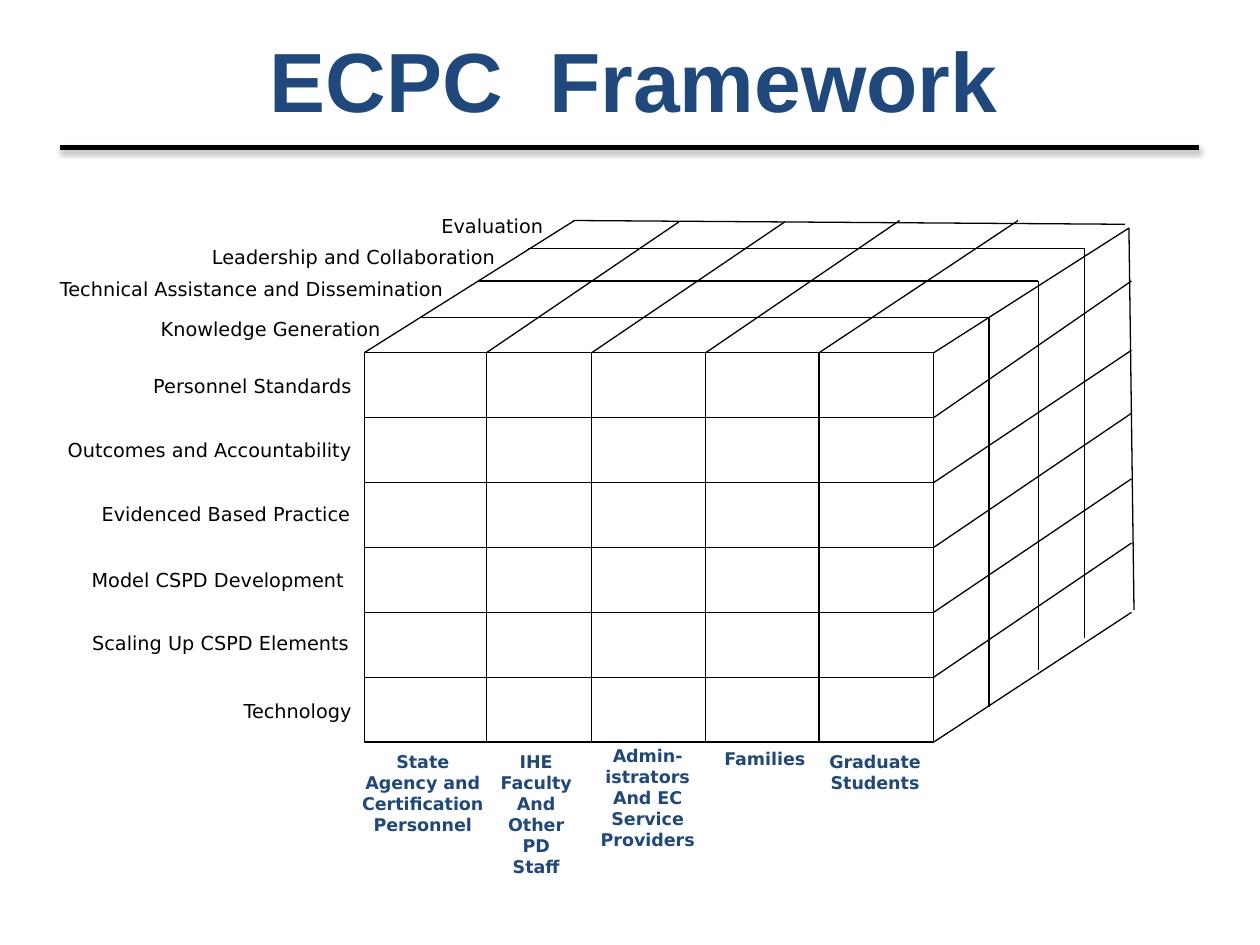
from lxml.etree import SubElement
from pptx import Presentation
from pptx.dml.color import RGBColor
from pptx.enum.shapes import MSO_CONNECTOR, MSO_SHAPE
from pptx.enum.text import MSO_ANCHOR, MSO_AUTO_SIZE, PP_ALIGN
from pptx.oxml.ns import qn
from pptx.util import Inches, Pt

BLACK = RGBColor(0x00, 0x00, 0x00)
NAVY = RGBColor(0x1F, 0x49, 0x7D)
COLUMNS, ROWS = 100, 75

# Front face of the cube, in grid units
LEFT, TOP, RIGHT, BOTTOM = 28.9, 28, 74.1, 58.9
HEIGHT = BOTTOM - TOP
ROW_COUNT = 6
LEFT_SIDE, RIGHT_SIDE = 1, 3

# (column on the front edge, far column, far row) of each line over the top
TOP_EDGES = [(LEFT, 45.6, 17.5), (38.6, 53.9, 17.6), (46.95, 62.3, 17.6),
             (56, 71.4, 17.5), (65, 80.8, 17.5), (RIGHT, 89.6, 18.1)]
# (left column, right column, row) of each layer behind the front face
LAYERS = [(33.4, 78.5, 25.2), (37.9, 82.4, 22.3), (41.9, 86.1, 19.75)]
# Far ends of the lines over the right face, from the first row line down
FAR_COLUMN = 89.8
FAR_ROWS = [22.3, 27.8, 32.8, 38, 43.1, 48.6]

# (text, right edge, top, width)
ROW_LABELS = [
    ("Evaluation", 44.1, 16.5, 31.7),
    ("Leadership and Collaboration", 40.3, 19, 35.9),
    ("Technical Assistance and Dissemination", 36.2, 21.5, 33.5),
    ("Knowledge Generation", 31.2, 24.7, 21.9),
    ("Personnel Standards", 28.9, 29.2, 25),
    ("Outcomes and Accountability", 28.9, 34.3, 26.7),
    ("Evidenced Based Practice", 28.8, 39.4, 27.4),
    ("Model CSPD Development", 28.3, 44.6, 25.8),
    ("Scaling Up CSPD Elements", 28.7, 49.6, 25.3),
    ("Technology", 28.9, 55, 18.4),
]
# (paragraphs, left, top, width, height)
COLUMN_LABELS = [
    (["State Agency and Certification Personnel"], 27.6, 59.1, 11.9, 7.7),
    (["IHE Faculty", "And Other PD Staff"], 38.5, 59.1, 8.1, 11.1),
    (["Admin-", "istrators", "And EC Service", "Providers"],
     46, 58.6, 10.8, 11.1),
    (["Families"], 56.4, 58.9, 8.6, 2.7),
    (["Graduate", "Students"], 64.8, 59.1, 9.3, 4.4),
]


def write(frame, paragraphs, *, font, size, color, bold=False,
          align=PP_ALIGN.CENTER):
    for index, text in enumerate(paragraphs):
        para = frame.paragraphs[0] if index == 0 else frame.add_paragraph()
        para.alignment = align
        span = para.add_run()
        span.text = text
        span.font.name = font
        span.font.size = Pt(size)
        span.font.bold = bold
        span.font.color.rgb = color


class FrameworkPage:
    """The current slide and its style; lengths are grid columns and rows."""

    title_font, label_font = "Arial", "DejaVu Sans"

    def __init__(self, deck):
        self.page = deck.slides.add_slide(deck.slide_layouts[6])
        self.column = deck.slide_width / COLUMNS
        self.row = deck.slide_height / ROWS

    def place(self, *lengths):
        """Turn alternating columns and rows into slide lengths."""
        units = (self.column, self.row) * 2
        return [round(length * unit) for length, unit in zip(lengths, units)]

    def text(self, paragraphs, left, top, width, height, **style):
        box = self.page.shapes.add_textbox(
            *self.place(left, top, width, height))
        frame = box.text_frame
        frame.word_wrap = True
        frame.auto_size = MSO_AUTO_SIZE.SHAPE_TO_FIT_TEXT
        write(frame, paragraphs, **{"font": self.label_font, **style})

    def title(self, text, left, top, width, height):
        box = self.page.shapes.add_textbox(
            *self.place(left, top, width, height))
        frame = box.text_frame
        frame.word_wrap = False
        frame.auto_size = MSO_AUTO_SIZE.NONE
        frame.vertical_anchor = MSO_ANCHOR.MIDDLE
        write(frame, [text], font=self.title_font, size=48, color=NAVY,
              bold=True)

    def outline(self, left, top, right, bottom):
        face = self.page.shapes.add_shape(
            MSO_SHAPE.RECTANGLE,
            *self.place(left, top, right - left, bottom - top))
        face.shadow.inherit = False
        face.fill.background()
        face.line.color.rgb = BLACK
        face.line.width = Pt(0.75)
        return face

    def line(self, x1, y1, x2, y2, width=0.75, begin=None, end=None):
        """Draw a line; begin and end are optional (shape, site) joints."""
        connector = self.page.shapes.add_connector(
            MSO_CONNECTOR.STRAIGHT, *self.place(x1, y1, x2, y2))
        if begin:
            connector.begin_connect(*begin)
        if end:
            connector.end_connect(*end)
        connector.line.color.rgb = BLACK
        connector.line.width = Pt(width)
        return SubElement(connector._element.spPr, qn("a:effectLst"))

    def shadowed_line(self, *ends, width):
        effects = self.line(*ends, width=width)
        shadow = SubElement(effects, qn("a:outerShdw"), blurRad=str(Pt(3.1)),
                            dist=str(Pt(1.8)), dir="5400000", rotWithShape="0")
        color = SubElement(shadow, qn("a:srgbClr"), val=str(BLACK))
        SubElement(color, qn("a:alpha"), val="35000")


def draw_cube(page):
    face = page.outline(LEFT, TOP, RIGHT, BOTTOM)
    for column, far_column, far_row in TOP_EDGES:
        page.line(column, TOP, far_column, far_row)
        if LEFT < column < RIGHT:
            page.line(column, TOP, column, BOTTOM)
    for left, right, row in LAYERS:
        page.line(left, row, right, row)
        page.line(right, row, right, row + HEIGHT)
    for index, far_row in enumerate(FAR_ROWS, start=1):
        row = TOP + index * HEIGHT / ROW_COUNT
        middle = index == ROW_COUNT // 2
        right_joint = (face, RIGHT_SIDE) if middle else None
        if index < ROW_COUNT:
            page.line(LEFT, row, RIGHT, row, end=right_joint,
                      begin=(face, LEFT_SIDE) if middle else None)
        page.line(RIGHT, row, FAR_COLUMN, far_row, begin=right_joint)
    page.line(45.5, 17.5, 89.3, 17.8)
    page.line(89.6, 18.1, 90, 48.4)


def main():
    deck = Presentation()
    deck.slide_width, deck.slide_height = Inches(10), Inches(7.5)
    page = FrameworkPage(deck)
    page.title("ECPC  Framework", 18.4, 3.6, 63.8, 5.4)
    page.shadowed_line(4.8, 11.7, 95.2, 11.7, width=3)
    draw_cube(page)
    for text, right, top, width in ROW_LABELS:
        page.text([text], right - width, top, width, 2.6, size=11,
                  color=BLACK, align=PP_ALIGN.RIGHT)
    for paragraphs, *bounds in COLUMN_LABELS:
        page.text(paragraphs, *bounds, size=10, color=NAVY, bold=True)
    deck.save("out.pptx")


if __name__ == "__main__":
    main()
